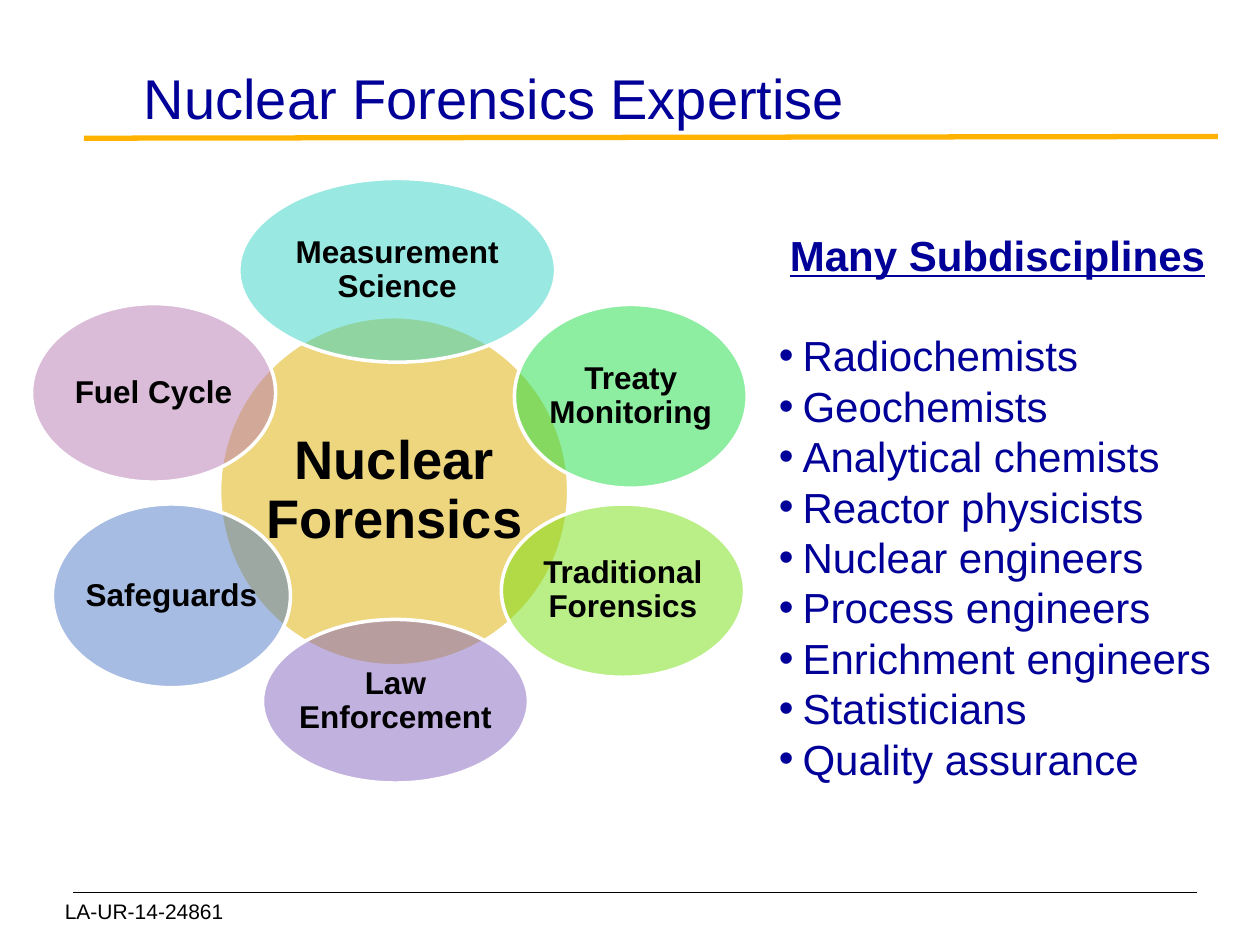
from lxml import etree
from pptx import Presentation
from pptx.dml.color import RGBColor
from pptx.enum import shapes, text
from pptx.oxml.ns import qn
from pptx.util import Pt

NAVY = "000099"
BLACK = "000000"


def color(value):
    return RGBColor.from_string(value)


def add_span(para, words, size, value, bold=False):
    span = para.add_run()
    span.text = words
    span.font.name = "Arial"
    span.font.size = Pt(size)
    span.font.bold = bold
    span.font.color.rgb = color(value)
    return span


deck = Presentation()
deck.slide_width, deck.slide_height = Pt(720), Pt(540)
page = deck.slides.add_slide(deck.slide_layouts[5])

# Footer rule and title rule
for x1, y1, x2, y2, value, width in [
    (42, 510, 684, 510, BLACK, 0.75),
    (48, 79, 696, 78, "FFB300", 3),
]:
    rule = page.shapes.add_connector(
        shapes.MSO_CONNECTOR.STRAIGHT, Pt(x1), Pt(y1), Pt(x2), Pt(y2))
    rule.line.color.rgb = color(value)
    rule.line.width = Pt(width)
    etree.SubElement(rule._element.spPr, qn("a:effectLst"))

footer = page.shapes.add_textbox(Pt(30), Pt(510), Pt(144), Pt(36))
footer.text_frame.word_wrap = True
add_span(footer.text_frame.paragraphs[0], "LA-UR-14-24861", 12, BLACK)

title = page.shapes.title
title.left, title.top, title.width, title.height = Pt(75), Pt(30), Pt(621), Pt(54)
frame = title.text_frame
frame.vertical_anchor = text.MSO_ANCHOR.MIDDLE
frame.margin_bottom = Pt(7)
frame.paragraphs[0].alignment = text.PP_ALIGN.LEFT
add_span(frame.paragraphs[0], "Nuclear Forensics Expertise", 32, NAVY)

# Hub first, then the overlapping fields around it
for words, left, top, width, height, value, size in [
    ("Nuclear Forensics", 125.5, 181, 199.5, 199.5, "DEAE00", 31),
    ("Traditional Forensics", 286.5, 288, 139, 99, "77DE0E", 18),
    ("Treaty Monitoring", 294, 174, 133, 105, "1DDD45", 18),
    ("Measurement Science", 136.5, 102, 181, 105, "34D4C6", 18),
    ("Safeguards", 30, 288, 136, 105, "4E7BC8", 18),
    ("Law Enforcement", 150, 354, 152, 93.5, "8465BF", 18),
    ("Fuel Cycle", 18, 173.5, 139.5, 102, "B77BB4", 18),
]:
    oval = page.shapes.add_shape(
        shapes.MSO_SHAPE.OVAL, Pt(left), Pt(top), Pt(width), Pt(height))
    oval.shadow.inherit = False
    oval.fill.solid()
    oval.fill.fore_color.rgb = color(value)
    fill_color = oval._element.spPr.find(qn("a:solidFill"))[0]
    etree.SubElement(fill_color, qn("a:alpha"), val="50000")
    oval.line.color.rgb = color("FFFFFF")
    oval.line.width = Pt(2)

    frame = oval.text_frame
    frame.word_wrap = False
    frame.vertical_anchor = text.MSO_ANCHOR.MIDDLE
    frame.margin_left = frame.margin_right = Pt(2)
    frame.margin_top = frame.margin_bottom = Pt(2)
    para = frame.paragraphs[0]
    para.alignment = text.PP_ALIGN.CENTER
    para.line_spacing = 0.9
    lines = [words] if words == "Fuel Cycle" else words.split()
    for index, line in enumerate(lines):
        if index:
            para.add_line_break()
        add_span(para, line, size, BLACK, bold=True)

# Subdisciplines list
box = page.shapes.add_textbox(Pt(438), Pt(126), Pt(264), Pt(327))
frame = box.text_frame
frame.word_wrap = True
frame.margin_top = Pt(5)
heading = frame.paragraphs[0]
heading.alignment = text.PP_ALIGN.CENTER
heading.line_spacing = Pt(28.8)
add_span(heading, "Many Subdisciplines", 24, NAVY, bold=True).font.underline = True

for index, words in enumerate([
    "Radiochemists", "Geochemists", "Analytical chemists", "Reactor physicists",
    "Nuclear engineers", "Process engineers", "Enrichment engineers",
    "Statisticians", "Quality assurance",
]):
    para = frame.add_paragraph()
    para.line_spacing = Pt(28.8)
    if index == 0:
        para.space_before = Pt(28.8)
    properties = para._p.get_or_add_pPr()
    properties.set("marL", str(Pt(13.5)))
    properties.set("indent", str(-Pt(13.5)))
    etree.SubElement(properties, qn("a:buFont"), typeface="Arial")
    etree.SubElement(properties, qn("a:buChar"), char="•")
    add_span(para, words, 24, NAVY)

deck.save("out.pptx")
